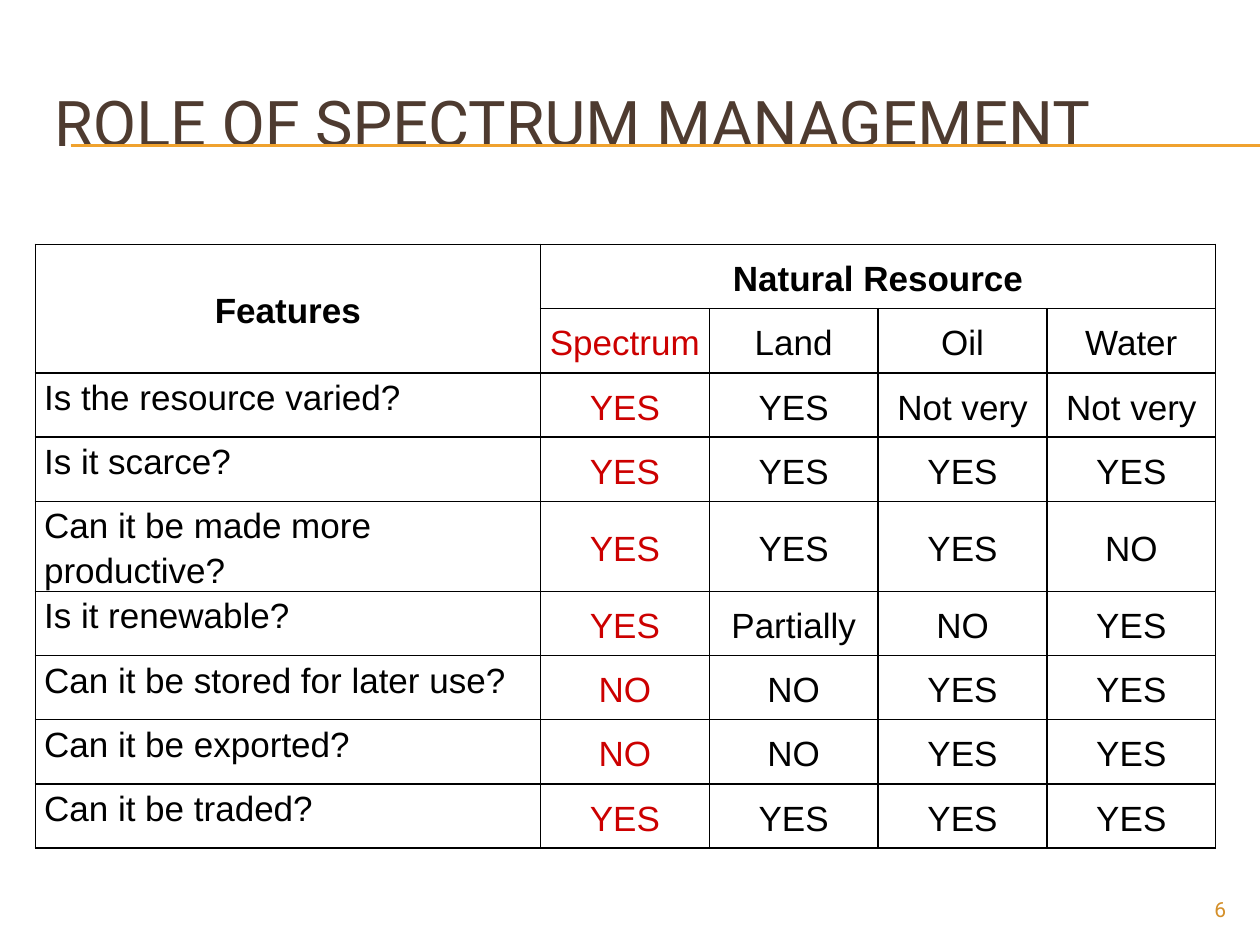
from dataclasses import dataclass

from lxml.etree import SubElement
from pptx import Presentation
from pptx.dml.color import RGBColor
from pptx.enum.shapes import MSO_CONNECTOR
from pptx.enum.text import MSO_ANCHOR, MSO_AUTO_SIZE, PP_ALIGN
from pptx.oxml.ns import qn
from pptx.util import Inches, Pt


@dataclass(frozen=True)
class Theme:
    title_font: str = "Roboto"
    table_font: str = "Arial"
    title_size: float = 36
    table_size: float = 20
    number_size: float = 12
    title_color: str = "4E3B30"
    rule_color: str = "F0A22E"
    number_color: str = "D48F29"
    text_color: str = "000000"
    highlight_color: str = "CC0000"


THEME = Theme()

RESOURCES = ["Spectrum", "Land", "Oil", "Water"]
FEATURES = [
    ("Is the resource varied?", "YES", "YES", "Not very", "Not very"),
    ("Is it scarce?", "YES", "YES", "YES", "YES"),
    ("Can it be made more productive?", "YES", "YES", "YES", "NO"),
    ("Is it renewable?", "YES", "Partially", "NO", "YES"),
    ("Can it be stored for later use?", "NO", "NO", "YES", "YES"),
    ("Can it be exported?", "NO", "NO", "YES", "YES"),
    ("Can it be traded?", "YES", "YES", "YES", "YES"),
]
HEADER_ROWS = 2
ROW_HEIGHT = 0.51
COLUMN_WIDTHS = [4.01] + [1.34] * len(RESOURCES)


def format_paragraph(paragraph, font_name, size, color, alignment, bold=False):
    paragraph.alignment = alignment
    for run in paragraph.runs:
        run.font.name = font_name
        run.font.size = Pt(size)
        run.font.bold = bold
        run.font.color.rgb = RGBColor.from_string(color)


def add_rule(slide, top):
    rule = slide.shapes.add_connector(
        MSO_CONNECTOR.STRAIGHT, Inches(0.56), Inches(top), Inches(10), Inches(top))
    rule.line.color.rgb = RGBColor.from_string(THEME.rule_color)
    rule.line.width = Pt(0.75)
    SubElement(rule.element.spPr, qn("a:effectLst"))


def set_title(slide, text):
    title = slide.shapes.title
    title.left, title.top = Inches(0.33), Inches(0.5)
    title.width, title.height = Inches(9.5), Inches(0.92)
    text_frame = title.text_frame
    text_frame.text = text
    text_frame.auto_size = MSO_AUTO_SIZE.NONE
    text_frame.vertical_anchor = MSO_ANCHOR.MIDDLE
    format_paragraph(text_frame.paragraphs[0], THEME.title_font, THEME.title_size,
                     THEME.title_color, PP_ALIGN.LEFT)


def add_borders(cell):
    properties = cell._tc.get_or_add_tcPr()
    for position, side in enumerate(("a:lnL", "a:lnR", "a:lnT", "a:lnB")):
        border = properties.makeelement(qn(side), {"w": str(Pt(1))})
        fill = SubElement(border, qn("a:solidFill"))
        SubElement(fill, qn("a:srgbClr"), val=THEME.text_color)
        properties.insert(position, border)


def fill_cell(cell, text, color=THEME.text_color, alignment=PP_ALIGN.CENTER,
              anchor=MSO_ANCHOR.MIDDLE, bold=False, space_before=4.3):
    cell.text_frame.text = text
    cell.vertical_anchor = anchor
    paragraph = cell.text_frame.paragraphs[0]
    paragraph.line_spacing = 1.15
    paragraph.space_before = Pt(space_before)
    format_paragraph(paragraph, THEME.table_font, THEME.table_size, color, alignment, bold)


def add_resource_table(slide):
    row_count = HEADER_ROWS + len(FEATURES)
    table = slide.shapes.add_table(
        row_count, len(COLUMN_WIDTHS), Inches(0.28), Inches(1.94),
        Inches(sum(COLUMN_WIDTHS)), Inches(ROW_HEIGHT * row_count)).table
    table.first_row = table.horz_banding = False
    for column, width in zip(table.columns, COLUMN_WIDTHS):
        column.width = Inches(width)
    for row in table.rows:
        row.height = Inches(ROW_HEIGHT)
    for cell in table.iter_cells():
        cell.fill.background()
        cell.margin_left = cell.margin_right = Inches(0.07)
        cell.margin_top = cell.margin_bottom = 0
        add_borders(cell)

    # Merged headings
    table.cell(0, 0).merge(table.cell(1, 0))
    table.cell(0, 1).merge(table.cell(0, len(RESOURCES)))
    fill_cell(table.cell(0, 0), "Features", bold=True, space_before=10)
    fill_cell(table.cell(0, 1), "Natural Resource", bold=True)

    # Resource names and answers, with spectrum highlighted
    answers = [RESOURCES] + [feature[1:] for feature in FEATURES]
    for row_index, values in enumerate(answers, start=1):
        for column_index, value in enumerate(values, start=1):
            color = THEME.highlight_color if column_index == 1 else THEME.text_color
            fill_cell(table.cell(row_index, column_index), value, color)

    # Feature questions
    for row_index, feature in enumerate(FEATURES, start=HEADER_ROWS):
        fill_cell(table.cell(row_index, 0), feature[0],
                  alignment=PP_ALIGN.LEFT, anchor=MSO_ANCHOR.TOP)


def add_slide_number(slide, text):
    box = slide.shapes.add_textbox(Inches(9), Inches(7.08), Inches(0.83), Inches(0.27))
    text_frame = box.text_frame
    text_frame.text = text
    text_frame.word_wrap = True
    text_frame.vertical_anchor = MSO_ANCHOR.MIDDLE
    format_paragraph(text_frame.paragraphs[0], THEME.title_font, THEME.number_size,
                     THEME.number_color, PP_ALIGN.RIGHT)


def main():
    presentation = Presentation()
    presentation.slide_width, presentation.slide_height = Inches(10), Inches(7.5)
    slide = presentation.slides.add_slide(presentation.slide_layouts[5])

    # Title with its double rule
    for top in (1.15, 1.16):
        add_rule(slide, top)
    set_title(slide, "ROLE OF SPECTRUM MANAGEMENT")

    # Comparison and footer
    add_resource_table(slide)
    add_slide_number(slide, "6")
    presentation.save("out.pptx")


if __name__ == "__main__":
    main()
